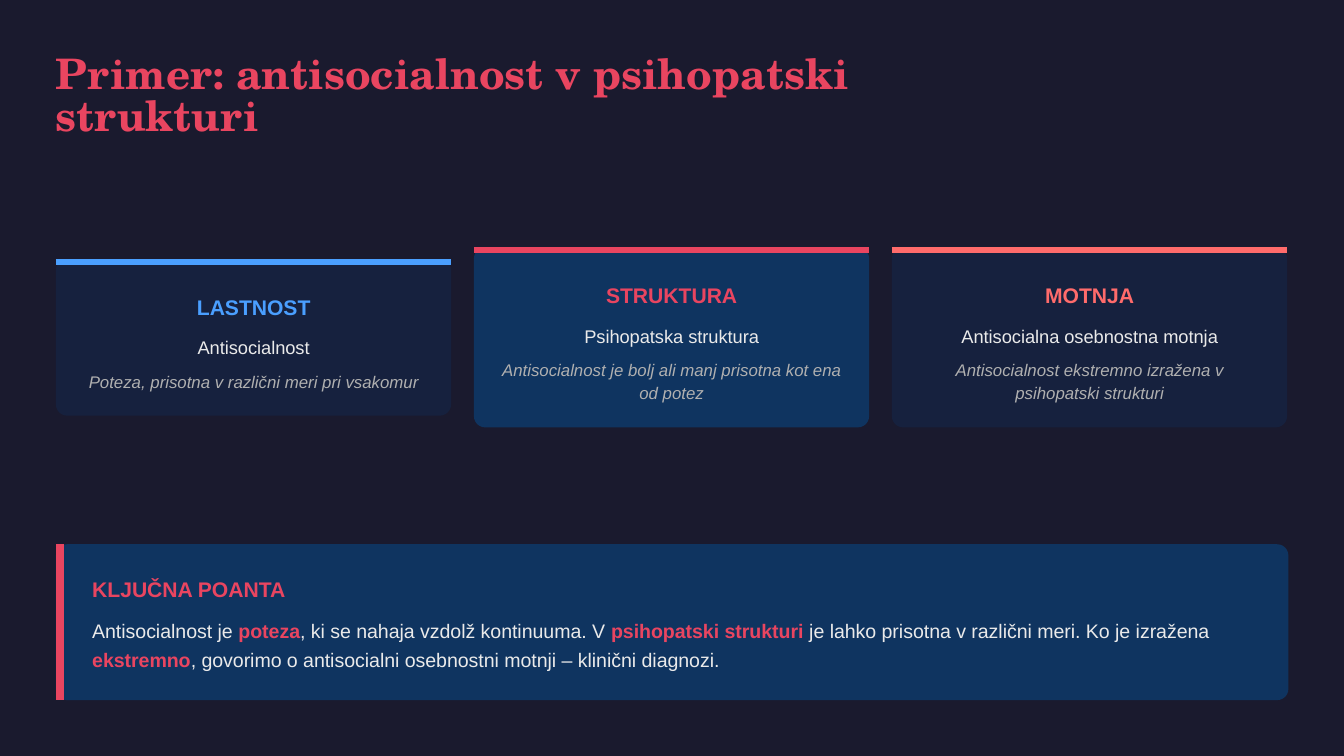
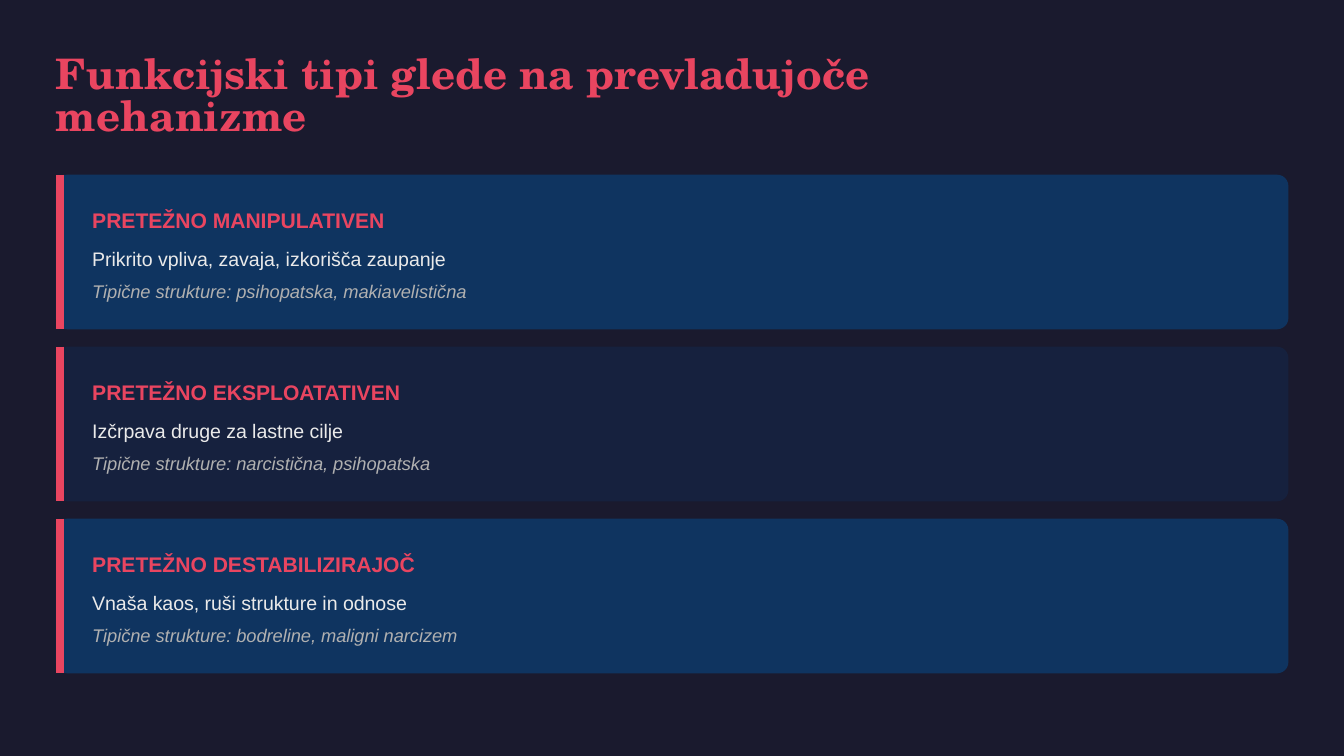
from collections import namedtuple

from lxml import etree
from pptx import Presentation
from pptx.dml.color import RGBColor
from pptx.enum.shapes import MSO_CONNECTOR, MSO_SHAPE
from pptx.enum.text import PP_ALIGN
from pptx.oxml.ns import qn
from pptx.util import Inches, Pt

LEFT, CENTER = PP_ALIGN.LEFT, PP_ALIGN.CENTER
ROUNDED, STRAIGHT = MSO_SHAPE.ROUNDED_RECTANGLE, MSO_CONNECTOR.STRAIGHT

NIGHT, NAVY, BLUE = "1A1A2E", "16213E", "0F3460"
RED, CORAL, SKY = "E94560", "FF6B6B", "4A9FFF"
WHITE, GREY = "EAEAEA", "B0B0B0"

Style = namedtuple("Style", "size leading after color bold italic font align",
                   defaults=(False, False, "Arial", LEFT))
TITLE = Style(22.5, 22.5, 18, RED, bold=True, font="TeX Gyre Schola")
HEADING = Style(11.25, 15.75, 6, RED, bold=True)
KEY_TEXT = Style(10.5, 15.75, 0, WHITE)
TYPE_TEXT = Style(10.5, 14.7, 3, WHITE)
TYPE_NOTE = Style(9.75, 13.65, 0, GREY, italic=True)
CARD_HEADING = HEADING._replace(after=7.5, align=CENTER)
CARD_TEXT = Style(9.75, 13.65, 4.5, WHITE, align=CENTER)
CARD_NOTE = Style(9, 12.6, 0, GREY, italic=True, align=CENTER)

MARGIN, CONTENT_WIDTH, RADIUS = 5 / 12, 9.17, 1 / 12
CARD_WIDTH, CARD_GAP, CARD_MIDDLE, CARD_PADDING = 2.94, 0.17, 2.51, 0.16
PANEL_HEIGHT, PANEL_GAP = 1.15, 0.13

EXAMPLE_TITLE = "Primer: antisocialnost v psihopatski strukturi"
CARDS = [
    ("LASTNOST", "Antisocialnost", "Poteza, prisotna v različni meri pri vsakomur",
     SKY, NAVY, 1),
    ("STRUKTURA", "Psihopatska struktura",
     "Antisocialnost je bolj ali manj prisotna kot ena od potez", RED, BLUE, 2),
    ("MOTNJA", "Antisocialna osebnostna motnja",
     "Antisocialnost ekstremno izražena v psihopatski strukturi", CORAL, NAVY, 2),
]
KEY_HEADING = "KLJUČNA POANTA"
KEY_SPANS = [
    ("Antisocialnost je ", False),
    ("poteza", True),
    (", ki se nahaja vzdolž kontinuuma. V ", False),
    ("psihopatski strukturi", True),
    (" je lahko prisotna v različni meri. Ko je izražena ", False),
    ("ekstremno", True),
    (", govorimo o antisocialni osebnostni motnji – klinični diagnozi.", False),
]

TYPES_TITLE = "Funkcijski tipi glede na prevladujoče mehanizme"
TYPES = [
    ("PRETEŽNO MANIPULATIVEN", "Prikrito vpliva, zavaja, izkorišča zaupanje",
     "Tipične strukture: psihopatska, makiavelistična", BLUE),
    ("PRETEŽNO EKSPLOATATIVEN", "Izčrpava druge za lastne cilje",
     "Tipične strukture: narcistična, psihopatska", NAVY),
    ("PRETEŽNO DESTABILIZIRAJOČ", "Vnaša kaos, ruši strukture in odnose",
     "Tipične strukture: bodreline, maligni narcizem", BLUE),
]


def rgb(color):
    return RGBColor.from_string(color)


def add_text(page, left, top, width, height, spans, style):
    box = page.shapes.add_textbox(Inches(left), Inches(top), Inches(width), Inches(height))
    frame = box.text_frame
    frame.word_wrap = True
    frame.margin_left = frame.margin_right = frame.margin_top = frame.margin_bottom = 0
    para = frame.paragraphs[0]
    para.alignment = style.align
    para.line_spacing, para.space_after = Pt(style.leading), Pt(style.after)
    font = para.font
    font.name, font.size = style.font, Pt(style.size)
    font.bold, font.italic = style.bold, style.italic
    font.color.rgb = rgb(style.color)
    if isinstance(spans, str):
        spans = [(spans, False)]
    for text, strong in spans:
        span = para.add_run()
        span.text = text
        if strong:
            span.font.bold = True
            span.font.color.rgb = rgb(RED)


def add_block(page, left, top, width, height, fill):
    block = page.shapes.add_shape(ROUNDED, Inches(left), Inches(top),
                                  Inches(width), Inches(height))
    block.adjustments[0] = RADIUS / min(width, height)
    block.shadow.inherit = False
    block.fill.solid()
    block.fill.fore_color.rgb = rgb(fill)
    block.line.fill.background()


def add_rule(page, start, end, color, weight):
    rule = page.shapes.add_connector(STRAIGHT, *map(Inches, start + end))
    rule.line.color.rgb = rgb(color)
    rule.line.width = Pt(weight)
    etree.SubElement(rule._element.spPr, qn("a:effectLst"))


def add_page(deck, title, title_width, title_after):
    page = deck.slides.add_slide(deck.slide_layouts[6])
    page.background.fill.solid()
    page.background.fill.fore_color.rgb = rgb(NIGHT)
    add_text(page, MARGIN, MARGIN, title_width, 0.31, title,
             TITLE._replace(after=title_after))
    return page


def add_card(page, column, card):
    heading, text, note, accent, fill, note_lines = card
    height = 0.99 + 0.175 * note_lines
    left = MARGIN + column * (CARD_WIDTH + CARD_GAP)
    top = CARD_MIDDLE - height / 2
    add_block(page, left, top, CARD_WIDTH, height, fill)
    add_rule(page, (left, top + 0.02), (left + CARD_WIDTH, top + 0.02), accent, 3)
    rows = [
        (0.23, 0.22, heading, CARD_HEADING._replace(color=accent)),
        (0.55, 0.19, text, CARD_TEXT),
        (0.81, 0.175 * note_lines, note, CARD_NOTE),
    ]
    for offset, row_height, content, style in rows:
        add_text(page, left + CARD_PADDING, top + offset,
                 CARD_WIDTH - 2 * CARD_PADDING, row_height, content, style)


def add_panel(page, top, height, fill, heading, rows):
    add_block(page, MARGIN, top, CONTENT_WIDTH, height, fill)
    bar = MARGIN + 0.03
    add_rule(page, (bar, top), (bar, top + height), RED, 4.5)
    for offset, row_height, content, style in [(0.21, 0.22, heading, HEADING)] + rows:
        add_text(page, MARGIN + 0.27, top + offset, 8.86, row_height, content, style)


def build_example(deck):
    page = add_page(deck, EXAMPLE_TITLE, 6.23, 18)
    for column, card in enumerate(CARDS):
        add_card(page, column, card)
    add_panel(page, 4.05, 1.16, BLUE, KEY_HEADING, [(0.51, 0.44, KEY_SPANS, KEY_TEXT)])


def build_types(deck):
    page = add_page(deck, TYPES_TITLE, 6.68, 15)
    for row, (heading, text, note, fill) in enumerate(TYPES):
        top = 1.3 + row * (PANEL_HEIGHT + PANEL_GAP)
        add_panel(page, top, PANEL_HEIGHT, fill, heading,
                  [(0.51, 0.2, text, TYPE_TEXT), (0.76, 0.19, note, TYPE_NOTE)])


def main():
    deck = Presentation()
    deck.slide_width = Inches(10)
    deck.slide_height = deck.slide_width * 9 // 16
    build_example(deck)
    build_types(deck)
    deck.save("out.pptx")


if __name__ == "__main__":
    main()
